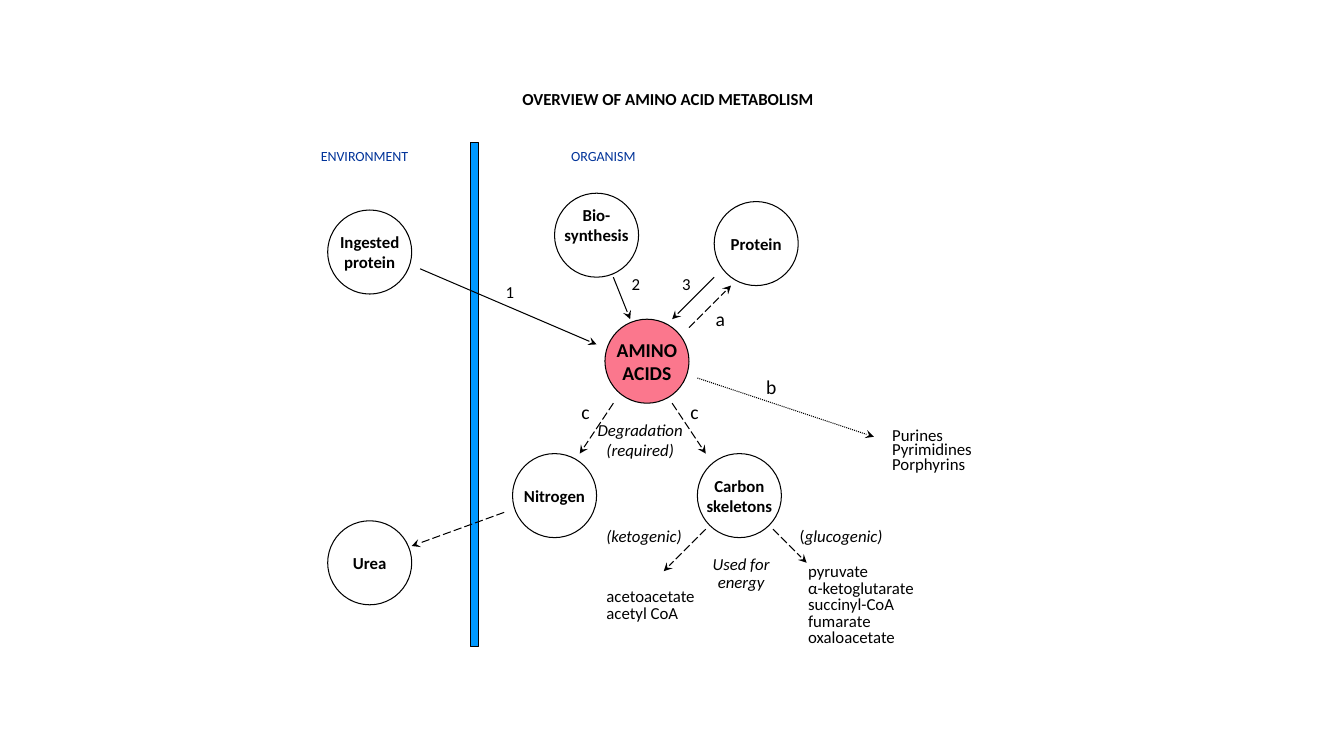
from lxml import etree
from pptx import Presentation
from pptx.dml.color import RGBColor
from pptx.enum.dml import MSO_LINE_DASH_STYLE as Dash
from pptx.enum.shapes import MSO_CONNECTOR as Conn, MSO_SHAPE as Shape
from pptx.enum.text import MSO_ANCHOR as Anchor, PP_ALIGN as Align
from pptx.oxml.ns import qn
from pptx.util import Inches, Pt

COLORS = {"ink": "000000", "paper": "FFFFFF", "divider": "0099FF",
          "heading": "003399", "amino": "FB778D"}
CELL = Inches(1 / 12)  # the slide is a grid of 160 columns and 90 rows
CIRCLE = 10            # diameter in cells


def color(name):
    return RGBColor.from_string(COLORS[name])


def cells(*counts):
    return [round(n * CELL) for n in counts]


def write(tf, lines, align=Align.LEFT, spacing=None, ink="ink", **font):
    """Fill a text frame; each line is a string or a list of (text, format) runs."""
    for i, line in enumerate(lines):
        p = tf.paragraphs[0] if i == 0 else tf.add_paragraph()
        p.alignment = align
        p.space_before = Pt(0)
        if spacing:
            p.line_spacing = Pt(spacing)
        for text, extra in ([(line, {})] if isinstance(line, str) else line):
            r = p.add_run()
            r.text = text
            r.font.color.rgb = color(ink)
            for key, value in {"name": "Calibri", "size": Pt(12), **font, **extra}.items():
                setattr(r.font, key, value)


def add_outlined(slide, kind, box, fill=None):
    sp = slide.shapes.add_shape(kind, *cells(*box))
    sp.shadow.inherit = False
    if fill:
        sp.fill.solid()
        sp.fill.fore_color.rgb = color(fill)
    else:
        sp.fill.background()
    sp.line.color.rgb = color("ink")
    sp.line.width = Pt(0.75)
    return sp


def add_circle(slide, x, y, lines, fill=None, lift=0, size=12):
    sp = add_outlined(slide, Shape.OVAL, (x, y, CIRCLE, CIRCLE), fill)
    tf = sp.text_frame
    tf.word_wrap = False
    tf.vertical_anchor = Anchor.MIDDLE
    tf.margin_left = tf.margin_right = tf.margin_top = 0
    tf.margin_bottom = Inches(2 * lift)
    write(tf, lines, Align.CENTER, bold=True, size=Pt(size))


def add_text(slide, x, y, lines, width=17, **style):
    sp = slide.shapes.add_textbox(*cells(x, y, width, 2.4 * len(lines) + 1.2))
    sp.text_frame.word_wrap = True
    write(sp.text_frame, lines, **style)


def add_arrow(slide, x1, y1, x2, y2, dash=None):
    line = slide.shapes.add_connector(Conn.STRAIGHT, *cells(x1, y1, x2, y2))
    line.line.color.rgb = color("ink")
    line.line.width = Pt(0.75)
    if dash:
        line.line.dash_style = dash
    ln = line.line._get_or_add_ln()
    etree.SubElement(ln, qn("a:tailEnd"), type="stealth")
    etree.SubElement(ln.getparent(), qn("a:effectLst"))


def title(slide, box):
    sp = slide.shapes.title
    sp.left, sp.top, sp.width, sp.height = cells(*box)
    sp.fill.solid()
    sp.fill.fore_color.rgb = color("paper")
    sp.text_frame.vertical_anchor = Anchor.TOP
    write(sp.text_frame, ["OVERVIEW OF AMINO ACID METABOLISM"], Align.CENTER, bold=True)


def compartments(slide, box):
    x, y, height = box
    add_outlined(slide, Shape.RECTANGLE, (x + 19, y, 1, height), "divider")
    for dx, name in ((0, "ENVIRONMENT"), (29.8, "ORGANISM")):
        add_text(slide, x + dx, y, [name], ink="heading", size=Pt(10))


def pools(slide, box):
    x, y = box
    for dx, dy, lines, style in (
            (2, 8, ["Ingested", "protein"], {}),
            (29, 6, ["Bio-", "synthesis"], {"lift": 0.1}),
            (48, 7, ["Protein"], {}),
            (35, 21, ["AMINO", "ACIDS"], {"fill": "amino", "size": 14}),
            (24, 37, ["Nitrogen"], {}),
            (46, 37, ["Carbon", "skeletons"], {}),
            (2, 45, ["Urea"], {})):
        add_circle(slide, x + dx, y + dy, lines, **style)


def pathways(slide, box):
    x, y = box
    # Arrows: supply solid, use dashed, synthesis of other compounds dotted
    for dash, arrows in (
            (None, [(13, 15, 34, 24), (36, 16, 38, 21), (48, 16, 43, 21)]),
            (Dash.LONG_DASH, [(45, 22, 50, 17), (36, 31, 32, 37), (43, 31, 47, 37),
                              (23, 44, 12, 48), (47, 46, 42, 51), (55, 46, 59, 50)]),
            (Dash.ROUND_DOT, [(46, 28, 67, 35)])):
        for x1, y1, x2, y2 in arrows:
            add_arrow(slide, x + x1, y + y1, x + x2, y + y2, dash)
    # Step numbers and letters
    for dx, dy, step in ((22, 16, "1"), (37, 15, "2"), (43, 15, "3"), (47, 19, "a"),
                         (53, 27, "b"), (31, 30, "c"), (44, 30, "c")):
        add_text(slide, x + dx, y + dy, [step], width=4,
                 size=Pt(12 if step.isdigit() else 14))


def products(slide, box):
    x, y = box
    italic = {"italic": True}
    remark = {"align": Align.CENTER, "width": 14, **italic}
    for dx, dy, lines, style in (
            (32.2, 32.4, ["Degradation", "(required)"], remark),
            (44.2, 48.5, ["Used for", "energy"], {"spacing": 13.3, **remark}),
            (34, 45, ["(ketogenic)"], italic),
            (57, 45, [[("(", {}), ("glucogenic)", italic)]], {}),
            (68, 33.6, ["Purines", "Pyrimidines", "Porphyrins"], {"spacing": 10.4}),
            (34, 52.6, ["acetoacetate", "acetyl CoA"], {"spacing": 11.8}),
            (58, 49.6, ["pyruvate", "α-ketoglutarate", "succinyl-CoA", "fumarate",
                        "oxaloacetate"], {"spacing": 11.8})):
        add_text(slide, x + dx, y + dy, lines, **style)


def main():
    prs = Presentation()
    prs.slide_width, prs.slide_height = Inches(13.33), Inches(7.5)
    slide = prs.slides.add_slide(prs.slide_layouts[5])
    title(slide, (48, 10, 63, 3.6))
    compartments(slide, (37, 17, 60))
    for region in (pools, pathways, products):
        region(slide, (37, 17))
    prs.save("out.pptx")


if __name__ == "__main__":
    main()
